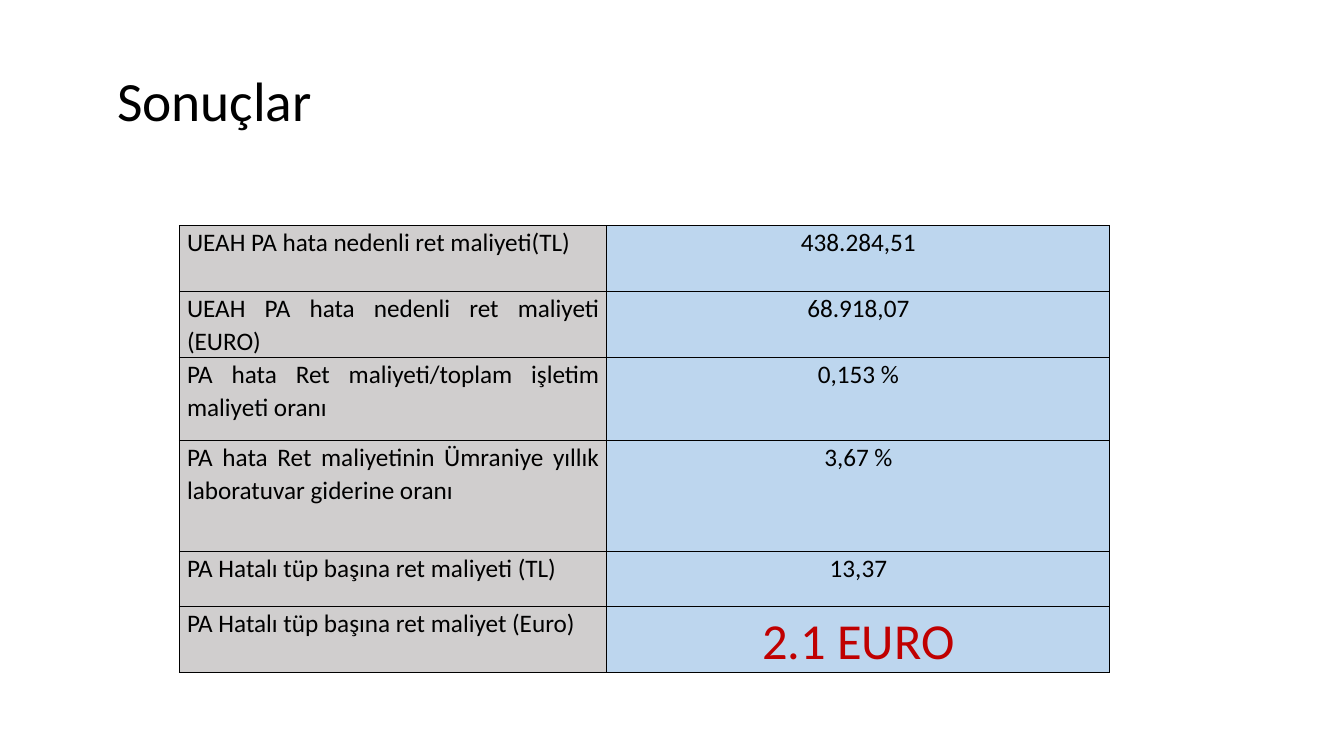
from pptx import Presentation
from pptx.dml.color import RGBColor
from pptx.enum.text import MSO_ANCHOR, PP_ALIGN
from pptx.oxml.ns import qn
from pptx.util import Pt
from lxml.etree import SubElement

RESULTS = [
    ("UEAH PA hata nedenli ret maliyeti(TL)", "438.284,51", 47.1),
    ("UEAH PA hata nedenli ret maliyeti (EURO)", "68.918,07", 47.1),
    ("PA hata Ret maliyeti/toplam işletim maliyeti oranı", "0,153 %", 59.4),
    ("PA hata Ret maliyetinin Ümraniye yıllık laboratuvar giderine oranı", "3,67 %", 79.2),
    ("PA Hatalı tüp başına ret maliyeti (TL)", "13,37", 39.3),
    ("PA Hatalı tüp başına ret maliyet (Euro)", "2.1 EURO", 47.1),
]
COLUMN_WIDTHS = (305.3, 359.3)
LABEL = {"fill": "D0CECE", "alignment": PP_ALIGN.JUSTIFY}
VALUE = {"fill": "BDD6EE", "alignment": PP_ALIGN.CENTER}
HIGHLIGHT = VALUE | {"size": 36, "color": "C00000"}


def color_of(hex_string):
    return RGBColor.from_string(hex_string)


def set_attributes(target, values):
    for name, value in values.items():
        setattr(target, name, value)


class SlideBuilder:
    font_name = "Calibri"
    text_color = "000000"
    border_color = "000000"

    def __init__(self, slide):
        self.slide = slide

    def add_text(self, text_frame, text, size, color, alignment, line_spacing):
        paragraph = text_frame.paragraphs[0]
        set_attributes(paragraph, {"alignment": alignment, "line_spacing": line_spacing})
        run = paragraph.add_run()
        run.text = text
        set_attributes(run.font, {"name": self.font_name, "size": Pt(size)})
        run.font.color.rgb = color_of(color)

    def add_title(self, text, left, top, width, height):
        text_box = self.slide.shapes.add_textbox(Pt(left), Pt(top), Pt(width), Pt(height))
        set_attributes(text_box.text_frame, {
            "word_wrap": True,
            "vertical_anchor": MSO_ANCHOR.MIDDLE,
            "margin_top": 0,
            "margin_bottom": 0,
        })
        self.add_text(text_box.text_frame, text, 39.6, self.text_color, PP_ALIGN.LEFT, 0.9)

    def add_borders(self, cell):
        properties = cell._tc.get_or_add_tcPr()
        for side in ("lnL", "lnR", "lnT", "lnB"):
            line = SubElement(properties, qn(f"a:{side}"), w=str(Pt(1)))
            fill = SubElement(line, qn("a:solidFill"))
            SubElement(fill, qn("a:srgbClr"), val=self.border_color)

    def fill_cell(self, cell, text, fill, alignment, size=18, color=text_color):
        set_attributes(cell, {
            "margin_left": Pt(5.4),
            "margin_right": Pt(5.4),
            "margin_top": 0,
            "margin_bottom": 0,
            "vertical_anchor": MSO_ANCHOR.TOP,
        })
        self.add_borders(cell)
        cell.fill.solid()
        cell.fill.fore_color.rgb = color_of(fill)
        self.add_text(cell.text_frame, text, size, color, alignment, 1.07)

    def add_results_table(self, results, left, top):
        width = sum(COLUMN_WIDTHS)
        height = sum(row_height for _, _, row_height in results)
        table = self.slide.shapes.add_table(
            len(results), len(COLUMN_WIDTHS), Pt(left), Pt(top), Pt(width), Pt(height)
        ).table
        set_attributes(table, {"first_row": False, "horz_banding": False})
        for column, column_width in zip(table.columns, COLUMN_WIDTHS):
            column.width = Pt(column_width)
        for index, (label, value, row_height) in enumerate(results):
            table.rows[index].height = Pt(row_height)
            value_format = HIGHLIGHT if index == len(results) - 1 else VALUE
            self.fill_cell(table.cell(index, 0), label, **LABEL)
            self.fill_cell(table.cell(index, 1), value, **value_format)


def main():
    presentation = Presentation()
    set_attributes(presentation, {"slide_width": Pt(960), "slide_height": Pt(540)})
    slide = presentation.slides.add_slide(presentation.slide_layouts[6])
    builder = SlideBuilder(slide)
    builder.add_title("Sonuçlar", 76.5, 52, 171, 44)
    builder.add_results_table(RESULTS, 128.2, 161.3)
    presentation.save("out.pptx")


if __name__ == "__main__":
    main()
